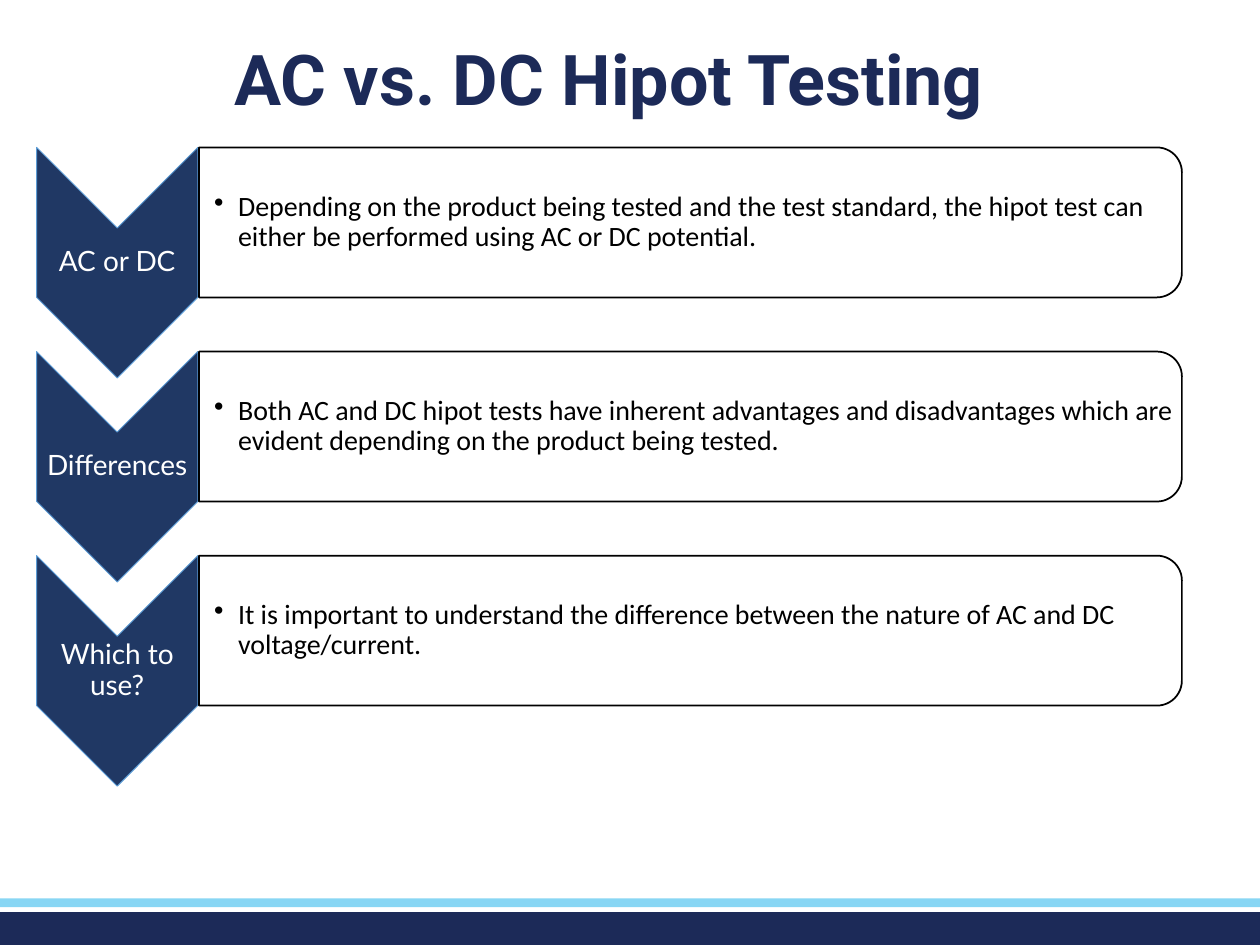
from dataclasses import dataclass

from lxml import etree
from pptx import Presentation
from pptx.dml.color import RGBColor
from pptx.enum.shapes import MSO_SHAPE
from pptx.enum.text import MSO_ANCHOR, MSO_AUTO_SIZE, PP_ALIGN
from pptx.oxml.ns import qn
from pptx.util import Inches, Pt

RECTANGLE = MSO_SHAPE.RECTANGLE
CHEVRON = MSO_SHAPE.CHEVRON
PANEL = MSO_SHAPE.ROUND_2_SAME_RECTANGLE
MIDDLE = MSO_ANCHOR.MIDDLE
CENTER = PP_ALIGN.CENTER
LEFT = PP_ALIGN.LEFT
NO_AUTOFIT = MSO_AUTO_SIZE.NONE


@dataclass(frozen=True)
class Theme:
    """Colours, fonts and type sizes of the slide."""
    navy: str = "1C2A58"
    sky: str = "88D6F4"
    chevron: str = "203864"
    chevron_edge: str = "5B9BD5"
    white: str = "FFFFFF"
    black: str = "000000"
    title_font: str = "Roboto"
    label_font: str = "Lato"
    body_font: str = "Calibri"
    title_size: int = 40
    text_size: int = 16
    line_spacing: float = 0.9


THEME = Theme()
WIDTH, HEIGHT = 10, 7.5
FIRST_ROW, ROW_PITCH = 1.17, 1.62
LABEL_LEFT, LABEL_WIDTH = 0.29, 1.28
PANEL_LEFT, PANEL_WIDTH, PANEL_HEIGHT = 1.58, 7.8, 1.19
CHEVRON_HEIGHT = 1.83
INSET, BULLET_INSET, BULLET_INDENT = 0.01, 0.12, 0.19

TOPICS = [
    ("AC or DC",
     "Depending on the product being tested and the test standard, the hipot test can "
     "either be performed using AC or DC potential."),
    ("Differences",
     "Both AC and DC hipot tests have inherent advantages and disadvantages which "
     "are evident depending on the product being tested."),
    ("Which to use?",
     "It is important to understand the difference between the nature of AC and DC "
     "voltage/current."),
]


def write(paragraph, words, font, size, color, align, bold=False):
    """Add one formatted run to a paragraph."""
    paragraph.alignment = align
    paragraph.line_spacing = THEME.line_spacing
    run = paragraph.add_run()
    run.text = words
    run.font.name = font
    run.font.size = Pt(size)
    run.font.bold = bold
    run.font.color.rgb = RGBColor.from_string(color)


def add_bullet(paragraph):
    """Give a paragraph a round bullet with a hanging indent."""
    properties = paragraph._p.get_or_add_pPr()
    properties.set("marL", str(Inches(BULLET_INDENT)))
    properties.set("indent", str(-Inches(BULLET_INDENT)))
    etree.SubElement(properties, qn("a:buChar")).set("char", "•")


def add_block(slide, preset, left, top, width, height, fill, edge=None, edge_width=1):
    """Draw a filled preset shape with an optional outline."""
    block = slide.shapes.add_shape(
        preset, Inches(left), Inches(top), Inches(width), Inches(height))
    block.shadow.inherit = False
    block.fill.solid()
    block.fill.fore_color.rgb = RGBColor.from_string(fill)
    if edge:
        block.line.color.rgb = RGBColor.from_string(edge)
        block.line.width = Pt(edge_width)
    else:
        block.line.fill.background()
    return block


def add_turned_block(slide, preset, left, top, width, height, fill, edge, edge_width):
    """Draw a shape turned a quarter clockwise to cover the given area."""
    shift = (width - height) / 2
    block = add_block(slide, preset, left + shift, top - shift, height, width,
                      fill, edge, edge_width)
    block.rotation = 90


def add_text_area(slide, left, top, width, height, left_inset=INSET):
    """Add a wrapping, middle-anchored text box and return its paragraph."""
    frame = slide.shapes.add_textbox(
        Inches(left), Inches(top), Inches(width), Inches(height)).text_frame
    frame.word_wrap = True
    frame.vertical_anchor = MIDDLE
    frame.margin_left = Inches(left_inset)
    frame.margin_top = frame.margin_right = frame.margin_bottom = Inches(INSET)
    return frame.paragraphs[0]


def add_topic(slide, top, label, statement):
    """Add a chevron label and its statement panel."""
    add_turned_block(slide, CHEVRON, LABEL_LEFT, top, LABEL_WIDTH, CHEVRON_HEIGHT,
                     THEME.chevron, THEME.chevron_edge, 0.5)
    label_line = add_text_area(slide, LABEL_LEFT, top + LABEL_WIDTH / 2, LABEL_WIDTH,
                               CHEVRON_HEIGHT - LABEL_WIDTH)
    write(label_line, label, THEME.label_font, THEME.text_size, THEME.white, CENTER)

    add_turned_block(slide, PANEL, PANEL_LEFT, top, PANEL_WIDTH, PANEL_HEIGHT,
                     THEME.white, THEME.black, 1)
    margin = 0.06
    statement_line = add_text_area(slide, PANEL_LEFT, top + margin, PANEL_WIDTH - margin,
                                   PANEL_HEIGHT - 2 * margin, BULLET_INSET)
    add_bullet(statement_line)
    write(statement_line, statement, THEME.body_font, THEME.text_size, THEME.black, LEFT)


def add_title(slide, words):
    """Place and format the title placeholder."""
    title = slide.shapes.title
    title.left, title.top = Inches(0.33), Inches(0.33)
    title.width, title.height = Inches(9), Inches(0.66)
    title.text_frame.auto_size = NO_AUTOFIT
    title.text_frame.vertical_anchor = MIDDLE
    write(title.text_frame.paragraphs[0], words, THEME.title_font, THEME.title_size,
          THEME.navy, CENTER, bold=True)


def main():
    """Build and save the slide."""
    deck = Presentation()
    deck.slide_width, deck.slide_height = Inches(WIDTH), Inches(HEIGHT)
    slide = deck.slides.add_slide(deck.slide_layouts[5])
    add_block(slide, RECTANGLE, 0, 7.24, WIDTH, HEIGHT - 7.24, THEME.navy)
    add_block(slide, RECTANGLE, 0, 7.13, WIDTH, 0.07, THEME.sky)
    add_title(slide, "AC vs. DC Hipot Testing")
    for row, (label, statement) in enumerate(TOPICS):
        add_topic(slide, FIRST_ROW + row * ROW_PITCH, label, statement)
    deck.save("out.pptx")


if __name__ == "__main__":
    main()
